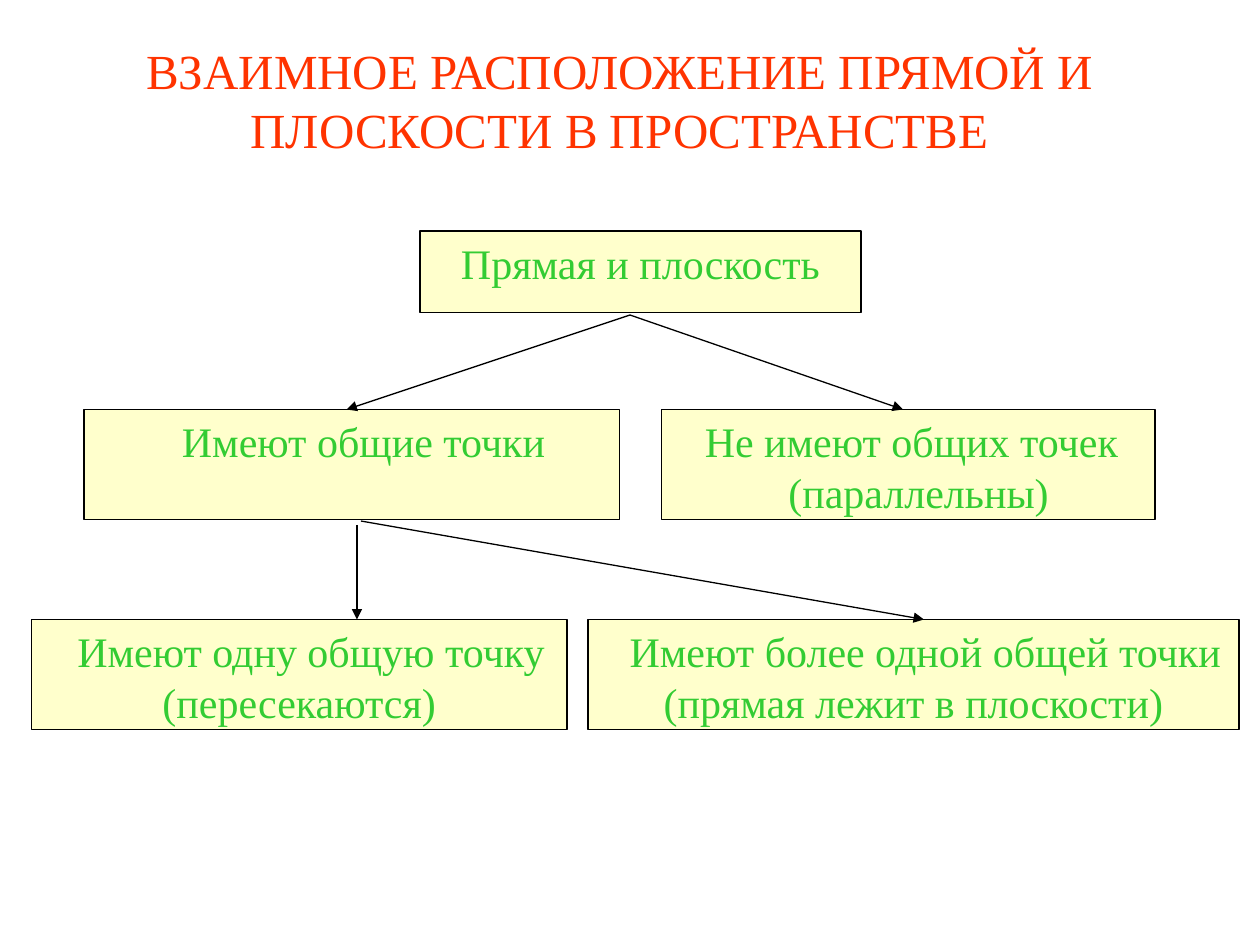
"""Build a slide with a tree of the positions of a line and a plane in space."""
from lxml import etree
from pptx import Presentation, util as u
from pptx.dml.color import RGBColor
from pptx.enum import shapes, text
from pptx.oxml.ns import qn

PX = 9525
FONT = "Times New Roman"
RED = RGBColor(0xFF, 0x33, 0x00)
GREEN = RGBColor(0x33, 0xCC, 0x33)
CREAM = RGBColor(0xFF, 0xFF, 0xCC)
BLACK = RGBColor(0x00, 0x00, 0x00)


def add_run(p, words, size, color):
    p.alignment = text.PP_ALIGN.CENTER
    r = p.add_run()
    r.text = words
    r.font.name = FONT
    r.font.size = u.Pt(size)
    r.font.color.rgb = color


prs = Presentation()
prs.slide_width, prs.slide_height = 960 * PX, 720 * PX
s = prs.slides.add_slide(prs.slide_layouts[5])

title = s.shapes.title
title.left, title.top, title.width, title.height = [v * PX for v in (64, 16, 816, 120)]
tf = title.text_frame
tf.auto_size = text.MSO_AUTO_SIZE.NONE
tf.vertical_anchor = text.MSO_ANCHOR.MIDDLE
add_run(tf.paragraphs[0], "ВЗАИМНОЕ РАСПОЛОЖЕНИЕ ПРЯМОЙ И ПЛОСКОСТИ В ПРОСТРАНСТВЕ", 28, RED)

boxes = [
    ((320, 176, 336, 62), [("Прямая и плоскость", 0)]),
    ((64, 312, 408, 84), [("Имеют общие точки", 18)]),
    ((504, 312, 376, 84), [("Не имеют общих точек", 5), ("(параллельны)", 16)]),
    ((24, 472, 408, 84), [("Имеют одну общую точку (пересекаются)", 18)]),
    ((448, 472, 496, 84), [("Имеют более одной общей точки (прямая лежит в плоскости)", 18)]),
]
for place, lines in boxes:
    sp = s.shapes.add_shape(shapes.MSO_SHAPE.RECTANGLE, *[v * PX for v in place])
    sp.shadow.inherit = False
    sp.fill.solid()
    sp.fill.fore_color.rgb = CREAM
    sp.line.color.rgb = BLACK
    sp.line.width = u.Pt(0.75)
    tf = sp.text_frame
    tf.word_wrap = True
    tf.vertical_anchor = text.MSO_ANCHOR.TOP
    for i, (words, indent) in enumerate(lines):
        p = tf.add_paragraph() if i else tf.paragraphs[0]
        add_run(p, words, 24, GREEN)
        pPr = p._p.get_or_add_pPr()
        pPr.set("marL", "0")
        pPr.set("indent", str(indent * PX))

arrows = [
    (480, 240, 264, 312),
    (480, 240, 688, 312),
    (275, 397, 704, 472),
    (272, 400, 272, 472),
]
for ends in arrows:
    c = s.shapes.add_connector(shapes.MSO_CONNECTOR.STRAIGHT, *[v * PX for v in ends])
    c.line.color.rgb = BLACK
    c.line.width = u.Pt(0.75)
    etree.SubElement(c.line._get_or_add_ln(), qn("a:tailEnd"), type="triangle")
    etree.SubElement(c._element.spPr, qn("a:effectLst"))

prs.save("out.pptx")
